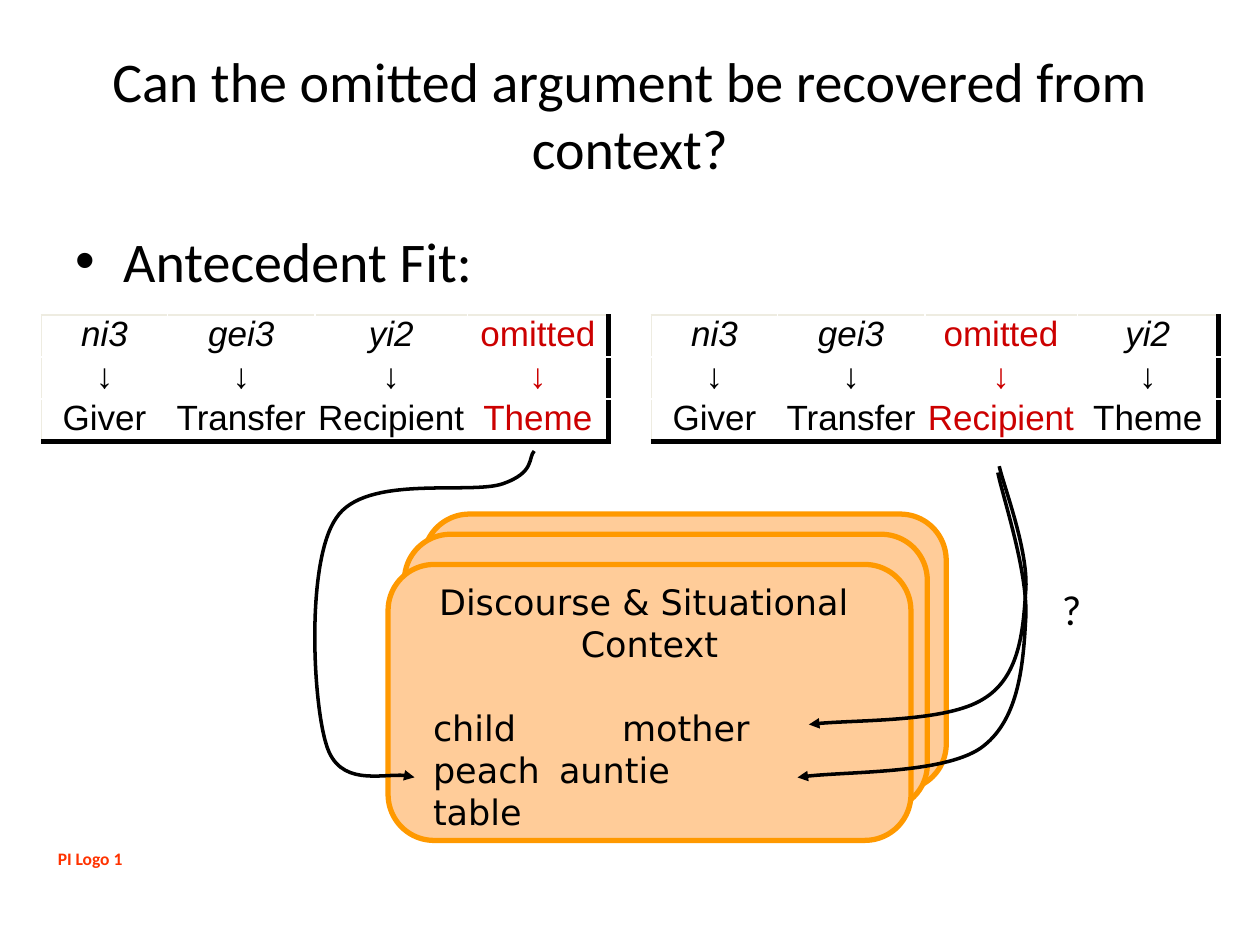
from lxml import etree
from pptx import Presentation
from pptx import util as u
from pptx.dml.color import RGBColor
from pptx.enum import shapes, text
from pptx.oxml.ns import qn

COLORS = {"ink": "000000", "omitted": "CC0000", "rim": "EEECE1",
          "card": "FFCC99", "edge": "FF9900", "logo": "FF3300"}
COLS, ROWS = 10, 7.5
CENTER, LEFT = text.PP_ALIGN.CENTER, text.PP_ALIGN.LEFT


def rgb(name):
    return RGBColor.from_string(COLORS[name])


class Deck:
    """Holds the style and the current slide; lengths are grid columns and rows."""

    def __init__(self):
        self.prs = Presentation()
        self.prs.slide_width, self.prs.slide_height = u.Inches(10), u.Inches(7.5)
        self.s = self.prs.slides.add_slide(self.prs.slide_layouts[5])

    def x(self, cols):
        return round(self.prs.slide_width * cols / COLS)

    def y(self, rows):
        return round(self.prs.slide_height * rows / ROWS)

    def box(self, left, top, width, height):
        return self.x(left), self.y(top), self.x(width), self.y(height)

    def style(self, p, size, font="Calibri", color="ink", align=LEFT,
              bold=False, italic=False):
        p.alignment = align
        for r in p.runs:
            r.font.size, r.font.name = u.Pt(size), font
            r.font.bold, r.font.italic = bold, italic
            r.font.color.rgb = rgb(color)

    def title(self, words, at):
        sp = self.s.shapes.title
        sp.left, sp.top, sp.width, sp.height = self.box(*at)
        tf = sp.text_frame
        tf.text, tf.vertical_anchor = words, text.MSO_ANCHOR.MIDDLE
        self.style(tf.paragraphs[0], 32, align=CENTER)

    def label(self, words, at, size, wrap=False, bullet=None, **look):
        tf = self.s.shapes.add_textbox(*self.box(*at)).text_frame
        tf.text, tf.word_wrap = words, wrap
        p = tf.paragraphs[0]
        if bullet:
            pPr = p._p.get_or_add_pPr()
            pPr.set("marL", str(self.x(0.38)))
            pPr.set("indent", str(-self.x(0.38)))
            etree.SubElement(pPr, qn("a:buFont")).set("typeface", "Arial")
            etree.SubElement(pPr, qn("a:buChar")).set("char", bullet)
        self.style(p, size, **look)

    def border(self, cell, side, color, width):
        ln = etree.SubElement(cell._tc.get_or_add_tcPr(), qn("a:ln" + side))
        ln.set("w", str(u.Pt(width)))
        fill = etree.SubElement(ln, qn("a:solidFill"))
        etree.SubElement(fill, qn("a:srgbClr")).set("val", COLORS[color])

    def role_table(self, left, top, widths, row_height, words, roles):
        grid = [words, ["↓"] * len(words), roles]
        last_row, last_col = len(grid) - 1, len(words) - 1
        table = self.s.shapes.add_table(
            len(grid), len(words),
            *self.box(left, top, sum(widths), row_height * len(grid))).table
        table.first_row = table.horz_banding = False
        for column, width in zip(table.columns, widths):
            column.width = self.x(width)
        for i, line in enumerate(grid):
            table.rows[i].height = self.y(row_height)
            for j, word in enumerate(line):
                cell, omitted = table.cell(i, j), words[j] == "omitted"
                cell.margin_left = cell.margin_right = 0
                cell.margin_top = cell.margin_bottom = 0
                cell.text_frame.text = word
                self.style(cell.text_frame.paragraphs[0], 20, "Arial",
                           "omitted" if omitted else "ink", CENTER,
                           italic=i == 0 and not omitted)
                for side, on_edge, color, width in (
                        ("L", j == 0, "rim", 1), ("R", j == last_col, "ink", 3),
                        ("T", i == 0, "rim", 1), ("B", i == last_row, "ink", 3)):
                    if on_edge:
                        self.border(cell, side, color, width)
                cell.fill.background()

    def card(self, at):
        sp = self.s.shapes.add_shape(shapes.MSO_SHAPE.ROUNDED_RECTANGLE, *self.box(*at))
        sp.shadow.inherit = False
        sp.fill.solid()
        sp.fill.fore_color.rgb = rgb("card")
        sp.line.color.rgb, sp.line.width = rgb("edge"), u.Pt(3)
        return sp

    def context(self, sp, heading, lines):
        tf = sp.text_frame
        tf.word_wrap, tf.vertical_anchor = True, text.MSO_ANCHOR.TOP
        tf.margin_left = tf.margin_right = tf.margin_bottom = 0
        tf.margin_top = self.y(0.02)
        tf.text = heading
        self.style(tf.paragraphs[0], 20, "DejaVu Sans", align=CENTER)
        for i, line in enumerate(lines):
            p = tf.add_paragraph()
            p.text, p.level = line, 1
            p._p.get_or_add_pPr().set("marL", str(self.x(0.25)))
            p._p.get_or_add_pPr().set("indent", "0")
            if i == 0:
                p.space_before = u.Pt(24)
            self.style(p, 20, "DejaVu Sans")

    def curve(self, start, *points):
        """Arrow along cubic curves: two control points and an end for each."""
        build = self.s.shapes.build_freeform(self.x(start[0]), self.y(start[1]))
        build.add_line_segments([(self.x(a), self.y(b)) for a, b in points], close=False)
        sp = build.convert_to_shape()
        sp.shadow.inherit = False
        sp.fill.background()
        sp.line.color.rgb, sp.line.width = rgb("ink"), u.Pt(2)
        route = sp._element.find(".//" + qn("a:path"))
        steps = route.findall(qn("a:lnTo"))
        for i in range(0, len(steps), 3):
            bezier = etree.SubElement(route, qn("a:cubicBezTo"))
            for step in steps[i:i + 3]:
                bezier.append(step[0])
                route.remove(step)
        ln = sp.line._get_or_add_ln()
        etree.SubElement(ln, qn("a:tailEnd")).set("type", "triangle")


def main():
    d = Deck()

    # Heading
    d.label("PI Logo 1", (0.36, 6.68, 0.71, 0.43), 10, color="logo",
            align=CENTER, bold=True)
    d.title("Can the omitted argument be recovered from context?", (0.5, 0.3, 9, 1.2))
    d.label("Antecedent Fit:", (0.5, 1.75, 9, 0.75), 32, wrap=True, bullet="•")

    # Role tables, set evenly from both slide edges
    widths = [1, 1.17, 1.21, 1.12]
    roles = ["Giver", "Transfer", "Recipient", "Theme"]
    margin = 0.33
    for left, words in ((margin, ["ni3", "gei3", "yi2", "omitted"]),
                        (COLS - margin - sum(widths), ["ni3", "gei3", "omitted", "yi2"])):
        d.role_table(left, 2.5, widths, 0.31, words, roles)

    # Stack of context cards
    for left, top in ((3.36, 4.08), (3.21, 4.24), (3.08, 4.48)):
        front = d.card((left, top, 4.15, 2.19))
    d.context(front, "Discourse & Situational \vContext",
              ["child\t\tmother", "peach\tauntie\t", "table"])

    # Arrows from the omitted roles to their candidates
    d.curve((4.24, 3.58), (4.19, 3.63), (4.25, 3.75), (3.99, 3.84),
            (3.73, 3.93), (2.9, 3.76), (2.67, 4.11),
            (2.43, 4.45), (2.48, 5.56), (2.59, 5.91),
            (2.69, 6.25), (3.14, 6.11), (3.29, 6.17))
    d.curve((7.93, 3.7), (7.97, 3.87), (8.17, 4.39), (8.14, 4.7),
            (8.12, 5.01), (8.09, 5.38), (7.8, 5.55),
            (7.51, 5.73), (6.71, 5.71), (6.42, 5.75))
    d.curve((7.92, 3.75), (7.96, 3.95), (8.17, 4.57), (8.14, 4.93),
            (8.12, 5.3), (8.08, 5.73), (7.78, 5.94),
            (7.48, 6.14), (6.64, 6.12), (6.33, 6.17))
    d.label("?", (8.33, 4.58, 0.39, 0.5), 24)

    d.prs.save("out.pptx")


if __name__ == "__main__":
    main()
